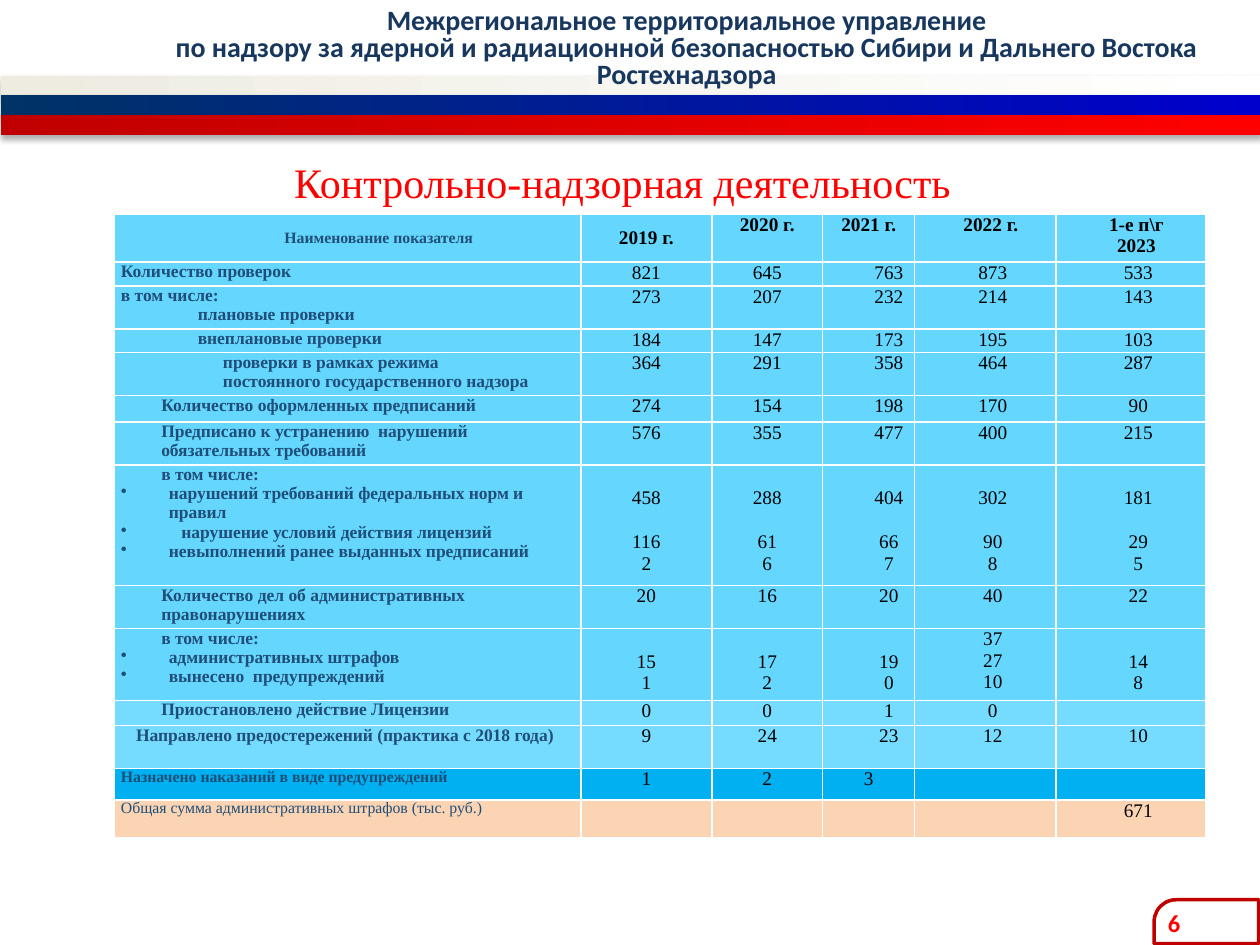
from lxml import etree
from pptx import Presentation
from pptx.dml.color import RGBColor
from pptx.enum.shapes import MSO_SHAPE
from pptx.enum.text import MSO_ANCHOR, PP_ALIGN
from pptx.oxml.ns import qn
from pptx.util import Inches, Pt

LEFT, CENTER = PP_ALIGN.LEFT, PP_ALIGN.CENTER
TOP, MIDDLE, BOTTOM = MSO_ANCHOR.TOP, MSO_ANCHOR.MIDDLE, MSO_ANCHOR.BOTTOM
RECT, ROUND_ONE = MSO_SHAPE.RECTANGLE, MSO_SHAPE.ROUND_1_RECTANGLE

SANS, SERIF = "Calibri", "Times New Roman"
RED, DARK_RED, NAVY, LABEL, BLACK = "FF0000", "C00000", "17375E", "1F4E79", "000000"
BLUE, LIGHT, DEEP, PEACH = "65D7FF", "75DBFF", "00B0F0", "FBD4B4"
LINE_HEIGHT = 0.18  # one line of 11 pt figures, inches


def rgb(hex_color):
    return RGBColor.from_string(hex_color)


def add_xml(parent, tag, **attrs):
    el = etree.SubElement(parent, qn(tag))
    for name, value in attrs.items():
        el.set(name, str(value))
    return el


class Builder:
    def __init__(self, slide):
        self.s = slide

    def band(self, y, h, start, end):
        sp = self.s.shapes.add_shape(RECT, Inches(0.01), Inches(y), Inches(9.99), Inches(h))
        sp.line.fill.background()
        sp.fill.gradient()
        sp.fill.gradient_angle = 0
        for stop, color in zip(sp.fill.gradient_stops, (start, end)):
            stop.color.rgb = rgb(color)
        effects = add_xml(sp._element.spPr, "a:effectLst")
        shadow = add_xml(effects, "a:outerShdw", blurRad=int(Pt(3.5)), dist=int(Pt(2.2)),
                         dir=5400000, rotWithShape=0)
        add_xml(add_xml(shadow, "a:srgbClr", val=BLACK), "a:alpha", val=32000)

    def page_frame(self, x, y, w, h):
        sp = self.s.shapes.add_shape(ROUND_ONE, Inches(x), Inches(y), Inches(w), Inches(h))
        sp.shadow.inherit = False
        sp.rotation = 270
        sp.adjustments[0] = 0.5
        sp.fill.background()
        sp.line.color.rgb = rgb(DARK_RED)
        sp.line.width = Pt(2)

    def run(self, p, text, size, color, font=SERIF, bold=False):
        r = p.add_run()
        r.text = text
        r.font.name, r.font.size, r.font.bold = font, Pt(size), bold
        r.font.color.rgb = rgb(color)

    def text(self, x, y, w, h, lines, size, color, font, bold, align, anchor, spacing=1.0):
        tf = self.s.shapes.add_textbox(Inches(x), Inches(y), Inches(w), Inches(h)).text_frame
        tf.word_wrap = True
        tf.vertical_anchor = anchor
        p = tf.paragraphs[0]
        p.alignment, p.line_spacing = align, spacing
        for i, line in enumerate(lines):
            if i:
                p.add_line_break()
            self.run(p, line, size, color, font, bold)

    def table(self, x, y, cols, rows):
        frame = self.s.shapes.add_table(len(rows), len(cols), Inches(x), Inches(y),
                                        Inches(sum(cols)), Inches(sum(rows)))
        table = frame.table
        table.first_row = table.horz_banding = False
        for col, w in zip(table.columns, cols):
            col.width = Inches(w)
        for row, h in zip(table.rows, rows):
            row.height = Inches(h)
        return table

    def cell(self, cell, fill, anchor=TOP):
        cell.margin_left = cell.margin_right = Inches(0.05)
        cell.margin_top = cell.margin_bottom = 0
        cell.vertical_anchor = anchor
        tc_pr = cell._tc.get_or_add_tcPr()
        for side in ("a:lnL", "a:lnR", "a:lnT", "a:lnB"):
            ln = add_xml(tc_pr, side, w=int(Pt(1)))
            add_xml(add_xml(ln, "a:solidFill"), "a:srgbClr", val="FFFFFF")
        cell.fill.solid()
        cell.fill.fore_color.rgb = rgb(fill)

    def paragraph(self, tf, text, indent, align, size, color, bold, bullet=False):
        p = tf.add_paragraph() if tf.paragraphs[0].runs else tf.paragraphs[0]
        p.alignment = align
        p_pr = p._p.get_or_add_pPr()
        p_pr.set("marL", str(int(Inches(indent[0]))))
        p_pr.set("indent", str(int(Inches(indent[1]))))
        if bullet:
            add_xml(p_pr, "a:buChar", char="•")
        self.run(p, text, size, color, bold=bold)
        return p

    def figures(self, cell, text, indent, bold=False):
        """Centred figures; an empty line becomes a gap above the next figure."""
        if not text:
            add_xml(cell.text_frame.paragraphs[0]._p, "a:endParaRPr", sz=1100)
            return
        gap = 0
        for i, line in enumerate(text.split("\n")):
            if not line:
                gap += LINE_HEIGHT
                continue
            first = not cell.text_frame.text
            p = self.paragraph(cell.text_frame, line, indent, CENTER, 11, BLACK, bold)
            if gap and first:
                cell.margin_top = Inches(gap)
            elif gap:
                p.space_before = Inches(gap)
            gap = 0


# Indents as (left margin, first line)
FLAT, SUB, DEEP_SUB, ITEM = (0, 0), (0, 0.61), (0, 0.81), (0.32, 0)
BULLET, WIDE_BULLET = (0.38, -0.38), (0.48, -0.48)
COLS = [3.7, 1.04, 0.88, 0.73, 1.12, 1.19]
HEADER_INDENTS = [FLAT, FLAT, FLAT, (0.09, 0), (0.12, -0.03)]
VALUE_INDENTS = [FLAT, FLAT, (0, 0.32), (0.12, 0), (0.12, 0)]
HEADER = ["2019 г.", "2020 г.", "2021 г.", "2022 г.", "1-е п\\г\n2023"]

# Row height, fill, label lines, figures by year
ROWS = [
    (0.19, BLUE, [("Количество проверок", FLAT)], ["821", "645", "763", "873", "533"]),
    (0.34, BLUE, [("в том числе:", FLAT), ("плановые проверки", SUB)],
     ["273", "207", "232", "214", "143"]),
    (0.19, BLUE, [("внеплановые проверки", SUB)], ["184", "147", "173", "195", "103"]),
    (0.34, BLUE, [("проверки в рамках режима", DEEP_SUB),
                  ("постоянного государственного надзора", DEEP_SUB)],
     ["364", "291", "358", "464", "287"]),
    (0.21, BLUE, [("Количество оформленных предписаний", ITEM)],
     ["274", "154", "198", "170", "90"]),
    (0.34, BLUE, [("Предписано к устранению  нарушений обязательных требований", ITEM)],
     ["576", "355", "477", "400", "215"]),
    (0.96, BLUE, [("в том числе:", ITEM),
                  ("нарушений требований федеральных норм и правил", BULLET),
                  ("нарушение условий действия лицензий", WIDE_BULLET),
                  ("невыполнений ранее выданных предписаний", BULLET)],
     ["\n458\n\n116\n2", "\n288\n\n61\n6", "\n404\n\n66\n7", "\n302\n\n90\n8", "\n181\n\n29\n5"]),
    (0.34, BLUE, [("Количество дел об административных правонарушениях", ITEM)],
     ["20", "16", "20", "40", "22"]),
    (0.57, BLUE, [("в том числе:", ITEM), ("административных штрафов", BULLET),
                  ("вынесено  предупреждений", BULLET)],
     ["\n15\n1", "\n17\n2", "\n19\n0", "37\n27\n10", "\n14\n8"]),
    (0.2, LIGHT, [("Приостановлено действие Лицензии", ITEM)], ["0", "0", "1", "0", ""]),
    (0.34, LIGHT, [("Направлено предостережений (практика с 2018 года)", (0.22, -0.1))],
     ["9", "24", "23", "12", "10"]),
    (0.25, DEEP, [("Назначено наказаний в виде предупреждений", FLAT)], ["1", "2", "3", "", ""]),
    (0.3, PEACH, [("Общая сумма административных штрафов (тыс. руб.)", FLAT)],
     ["", "", "", "", "671"]),
]


def fill_table(b):
    table = b.table(0.91, 1.7, COLS, [0.38] + [row[0] for row in ROWS])

    # Header row
    for c in range(len(COLS)):
        cell = table.cell(0, c)
        b.cell(cell, BLUE, MIDDLE if c < 2 else TOP)
        if c:
            b.figures(cell, HEADER[c - 1], HEADER_INDENTS[c - 1], bold=True)
        else:
            b.paragraph(cell.text_frame, "Наименование показателя", (0, 0.49), CENTER,
                        9, LABEL, True)

    # Indicator rows
    for n, (_, fill, labels, values) in enumerate(ROWS, 1):
        name = table.cell(n, 0)
        b.cell(name, fill)
        for text, indent in labels:
            b.paragraph(name.text_frame, text, indent, LEFT, 9 if fill in (DEEP, PEACH) else 10,
                        LABEL, fill != PEACH, indent in (BULLET, WIDE_BULLET))
        for c, (value, indent) in enumerate(zip(values, VALUE_INDENTS), 1):
            cell = table.cell(n, c)
            b.cell(cell, fill)
            b.figures(cell, value, FLAT if fill == DEEP else indent)


def main():
    prs = Presentation()
    prs.slide_width, prs.slide_height = Inches(10), Inches(7.5)
    b = Builder(prs.slides.add_slide(prs.slide_layouts[6]))

    # Flag bands and page number frame
    bands = [("EEECE1", "FFFFFF"), ("003366", "0000CC"), (DARK_RED, RED)]
    for i, (start, end) in enumerate(bands):
        b.band(0.6 + 0.155 * i, 0.16, start, end)
    b.page_frame(9.4, 6.9, 0.35, 0.83)

    # Heading, title and page number
    b.text(1.06, -0.11, 8.78, 0.87,
           ["Межрегиональное территориальное управление",
            "по надзору за ядерной и радиационной безопасностью Сибири и Дальнего Востока "
            "Ростехнадзора"], 16, NAVY, SANS, True, CENTER, BOTTOM, 0.8)
    b.text(0.47, 1.17, 8.94, 0.54, ["Контрольно-надзорная деятельность"],
           24, RED, SERIF, False, CENTER, MIDDLE)
    b.text(9.17, 7.14, 0.83, 0.36, ["6"], 14, RED, SANS, True, LEFT, MIDDLE)

    # Table of indicators
    fill_table(b)
    prs.save("out.pptx")


if __name__ == "__main__":
    main()
